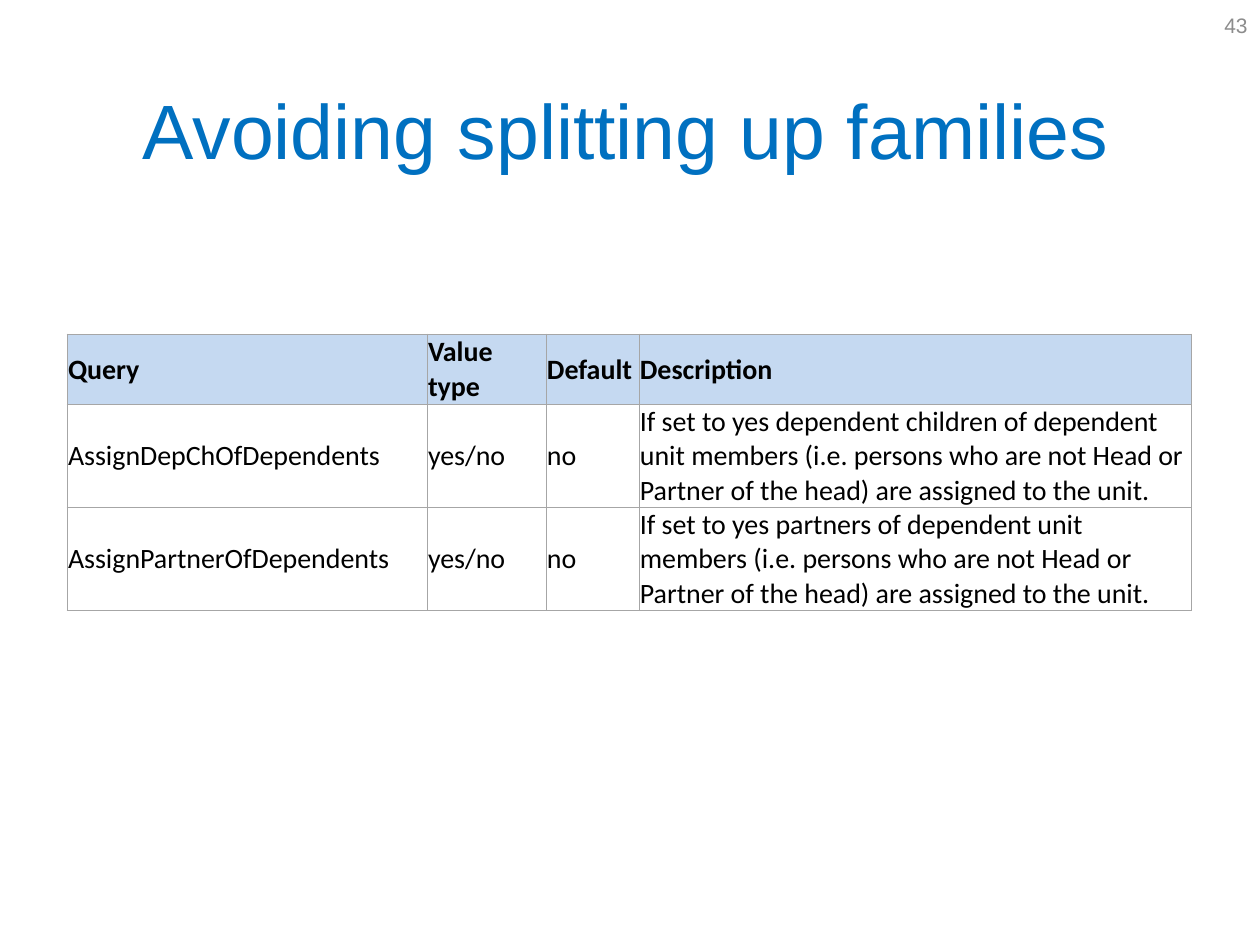
from dataclasses import dataclass

from lxml import etree
from pptx import Presentation
from pptx.dml.color import RGBColor
from pptx.enum.text import MSO_ANCHOR, PP_ALIGN
from pptx.oxml.ns import qn
from pptx.util import Pt

LEFT, CENTER, RIGHT = PP_ALIGN.LEFT, PP_ALIGN.CENTER, PP_ALIGN.RIGHT
MIDDLE = MSO_ANCHOR.MIDDLE
EMU_PER_PX = 914400 / 126


@dataclass(frozen=True)
class Theme:
    title_color: str = "0070C0"
    number_color: str = "8C8C8C"
    text_color: str = "000000"
    header_fill: str = "C5D9F1"
    body_fill: str = "FFFFFF"
    border_color: str = "A6A6A6"
    border_width: float = 0.5
    title_size: int = 44
    number_size: int = 12
    table_size: int = 16
    heading_font: str = "Arial"
    table_font: str = "Calibri"


THEME = Theme()


def px(length):
    return round(length * EMU_PER_PX)


def write_text(frame, text, *, size, color, font, align=LEFT, bold=False):
    frame.word_wrap = True
    paragraph = frame.paragraphs[0]
    paragraph.alignment = align
    run = paragraph.add_run()
    run.text = text
    run.font.size = Pt(size)
    run.font.name = font
    run.font.bold = bold
    run.font.color.rgb = RGBColor.from_string(color)


presentation = Presentation()
presentation.slide_width = px(1260)
presentation.slide_height = px(945)
slide = presentation.slides.add_slide(presentation.slide_layouts[6])

# Page number and title
headings = [
    ("43", (966, 0, 294, 50), THEME.number_size, THEME.number_color, RIGHT),
    ("Avoiding splitting up families", (59, 50, 1134, 158),
     THEME.title_size, THEME.title_color, CENTER),
]
for text, box, size, color, align in headings:
    shape = slide.shapes.add_textbox(*map(px, box))
    shape.text_frame.vertical_anchor = MIDDLE
    write_text(shape.text_frame, text, size=size, color=color,
               font=THEME.heading_font, align=align)

# Table of queries
query_rows = [
    ("Query", "Value type", "Default", "Description"),
    ("AssignDepChOfDependents", "yes/no", "no",
     "If set to yes dependent children of dependent unit members (i.e. persons "
     "who are not Head or Partner of the head) are assigned to the unit."),
    ("AssignPartnerOfDependents", "yes/no", "no",
     "If set to yes partners of dependent unit members (i.e. persons "
     "who are not Head or Partner of the head) are assigned to the unit."),
]
column_widths = [360, 119, 93, 553]
row_heights = [70, 103, 103]
table = slide.shapes.add_table(
    len(query_rows), len(column_widths), px(67), px(334),
    px(sum(column_widths)), px(sum(row_heights))).table
for column, width in zip(table.columns, column_widths):
    column.width = px(width)
for row, height in zip(table.rows, row_heights):
    row.height = px(height)

for row_index, texts in enumerate(query_rows):
    is_header = row_index == 0
    for column_index, text in enumerate(texts):
        cell = table.cell(row_index, column_index)
        cell.vertical_anchor = MIDDLE
        cell.margin_left = cell.margin_right = cell.margin_top = px(1)
        cell.margin_bottom = 0
        write_text(cell.text_frame, text, size=THEME.table_size,
                   color=THEME.text_color, font=THEME.table_font, bold=is_header)
        properties = cell._tc.get_or_add_tcPr()
        for side in ("a:lnL", "a:lnR", "a:lnT", "a:lnB"):
            line = etree.SubElement(properties, qn(side),
                                    w=str(Pt(THEME.border_width)))
            line_fill = etree.SubElement(line, qn("a:solidFill"))
            etree.SubElement(line_fill, qn("a:srgbClr"), val=THEME.border_color)
        cell.fill.solid()
        cell.fill.fore_color.rgb = RGBColor.from_string(
            THEME.header_fill if is_header else THEME.body_fill)

presentation.save("out.pptx")
